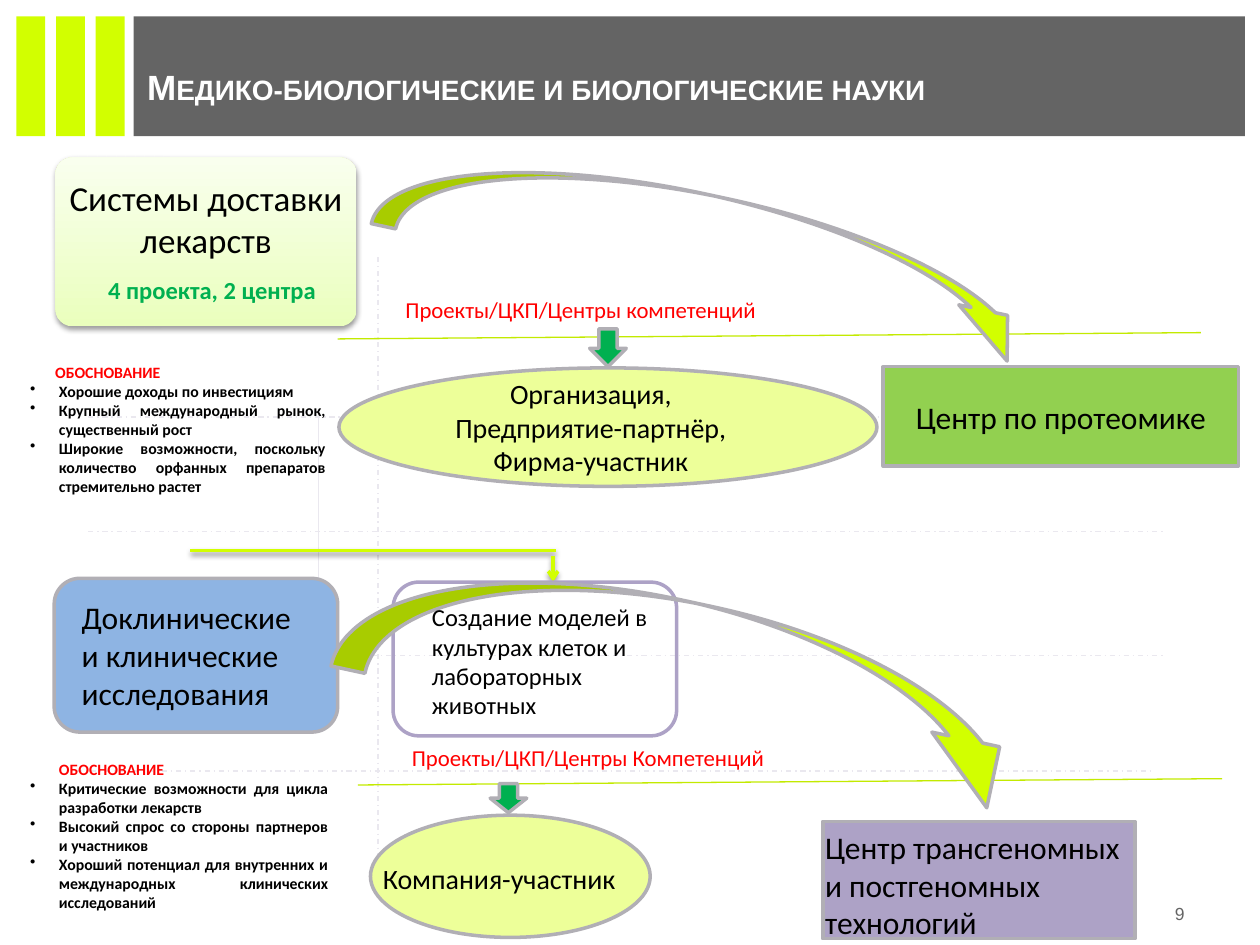
"""Build the slide on medical and biological sciences."""
from lxml import etree
from pptx import Presentation
from pptx.dml import color as dml
from pptx.enum import dml as dash, shapes, text
from pptx.oxml import ns
from pptx.util import Inches, Pt

HUES = {
    "lime": "D2FF00", "grey": "646464", "white": "FFFFFF", "black": "000000",
    "red": "FF0000", "green": "00B050", "grass": "92D050", "edge": "B1AFB5",
    "pale": "EDFF99", "blue": "8EB4E3", "mauve": "ADA2C6", "grid": "EAE8EF",
    "rule": "C3EA00", "low": "EAFFBD", "high": "F9FFEE",
}
RGB = {name: dml.RGBColor.from_string(code) for name, code in HUES.items()}
KIND = shapes.MSO_SHAPE
LEFT, MID, RIGHT, FULL = (text.PP_ALIGN.LEFT, text.PP_ALIGN.CENTER,
                          text.PP_ALIGN.RIGHT, text.PP_ALIGN.JUSTIFY)

deck = Presentation()
deck.slide_width, deck.slide_height = Inches(10), Inches(7.5)
slide = deck.slides.add_slide(deck.slide_layouts[6])


def cast(effect):
    """Put a soft shadow below into an effect list."""
    shade = etree.SubElement(effect, ns.qn("a:outerShdw"), blurRad=str(Pt(3.1)),
                             dist=str(Pt(1.6)), dir="5400000", rotWithShape="0")
    ink = etree.SubElement(shade, ns.qn("a:srgbClr"), val=HUES["black"])
    etree.SubElement(ink, ns.qn("a:alpha"), val="38000")


def say(place, lines, size, hue="black", align=LEFT, bold=False, font="Calibri", mid=False):
    """Add a text box with one paragraph per line."""
    box = slide.shapes.add_textbox(*map(Inches, place))
    frame = box.text_frame
    frame.word_wrap = True
    if mid:
        frame.vertical_anchor = text.MSO_ANCHOR.MIDDLE
    for i, line in enumerate(lines):
        para = frame.paragraphs[0] if i == 0 else frame.add_paragraph()
        para.text = line
        para.alignment = align
        para.font.size, para.font.name, para.font.bold = Pt(size), font, bold
        para.font.color.rgb = RGB[hue]
    return frame


for left, width, hue in [(1.06, 8.82, "grey"), *((0.13 + 0.315 * i, 0.23, "lime") for i in range(3))]:
    bar = slide.shapes.add_shape(KIND.RECTANGLE, *map(Inches, (left, 0.13, width, 0.95)))
    bar.shadow.inherit = False
    bar.fill.solid()
    bar.fill.fore_color.rgb = RGB[hue]
    bar.line.fill.background()

title = say((1.07, 0.3, 8.81, 0.77), ["Медико-биологические и биологические науки"], 20,
            "white", bold=True, font="Arial", mid=True)
title.paragraphs[0].runs[0].font._element.set("cap", "small")
say((7.17, 7.15, 2.33, 0.2), ["9"], 10, "grey", RIGHT, font="Arial", mid=True)

wires = [
    (3, 2.04, 3, 6.96, "grid", "dash"),
    (0.61, 6.12, 9.14, 6.12, "grid", "dash"),
    *((0.7, y, 9.23, y, "grid", "dash") for y in (3.31, 4.22, 5.2)),
    (2.53, 3.31, 2.53, 5.74, "grid", ""),
    (2.68, 2.69, 9.53, 2.64, "rule", ""),
    (2.84, 6.23, 9.7, 6.18, "rule", ""),
    (1.51, 4.37, 4.41, 4.37, "lime", "bold"),
    (4.39, 4.41, 4.39, 4.62, "lime", "arrow"),
]
boxes = [
    (KIND.ROUNDED_RECTANGLE, 0.44, 1.25, 2.39, 1.34, "fade", None),
    (KIND.RECTANGLE, 7.01, 2.91, 2.82, 0.79, "grass", "edge"),
    (KIND.CURVED_UP_ARROW, 2.97, 1.56, 5.36, 0.79, "lime", "edge"),
    (KIND.OVAL, 2.69, 2.92, 4.27, 0.94, "pale", "edge"),
    (KIND.ROUNDED_RECTANGLE, 0.43, 4.59, 2.25, 1.22, "blue", "edge"),
    (KIND.ROUNDED_RECTANGLE, 3.12, 4.62, 2.25, 1.22, None, "mauve"),
    (KIND.OVAL, 2.94, 6.47, 2.22, 0.97, "pale", "edge"),
    (KIND.DOWN_ARROW, 4.68, 2.61, 0.29, 0.3, "green", "edge"),
    (KIND.DOWN_ARROW, 3.89, 6.22, 0.29, 0.23, "green", "edge"),
    (KIND.CURVED_UP_ARROW, 2.68, 4.79, 5.6, 1.1, "lime", "edge"),
    (KIND.RECTANGLE, 6.53, 6.52, 2.48, 0.93, "mauve", "edge"),
]

for *ends, hue, style in wires:
    wire = slide.shapes.add_connector(shapes.MSO_CONNECTOR.STRAIGHT, *map(Inches, ends))
    wire.line.color.rgb = RGB[hue]
    wire.line.width = Pt(2 if style in ("bold", "arrow") else 0.75)
    if style == "dash":
        wire.line.dash_style = dash.MSO_LINE.DASH_DOT
    if style == "arrow":
        etree.SubElement(wire.line._get_or_add_ln(), ns.qn("a:tailEnd"), type="arrow")
    effect = etree.SubElement(wire._element.spPr, ns.qn("a:effectLst"))
    if style in ("bold", "arrow"):
        cast(effect)

for kind, *place, hue, edge in boxes:
    box = slide.shapes.add_shape(kind, *map(Inches, place))
    box.shadow.inherit = False
    if hue == "fade":
        box.adjustments[0] = 0.1
        box.fill.gradient()
        box.fill.gradient_angle = 90
        for stop, tint in zip(box.fill.gradient_stops, ("low", "high")):
            stop.color.rgb = RGB[tint]
        cast(box._element.spPr.find(ns.qn("a:effectLst")))
    elif hue:
        box.fill.solid()
        box.fill.fore_color.rgb = RGB[hue]
    else:
        box.fill.background()
    if edge:
        box.line.color.rgb = RGB[edge]
        box.line.width = Pt(2)
    else:
        box.line.fill.background()
    if kind == KIND.CURVED_UP_ARROW:
        box.rotation = 12.2
        box.adjustments[2] = 0.45
        box._element.spPr.xfrm.set("flipV", "1")
    if hue == "grass":
        para = box.text_frame.paragraphs[0]
        para.text = "Центр по протеомике"
        para.alignment = MID
        para.font.size, para.font.name = Pt(18), "Calibri"
        para.font.color.rgb = RGB["black"]

head = say((0.48, 1.29, 2.31, 0.88), ["Системы доставки лекарств"], 20, align=MID, mid=True)
head.margin_left = head.margin_right = Inches(0.04)
say((0.76, 2.13, 1.92, 0.34), ["4 проекта, 2 центра"], 14, "green", bold=True)
say((3.12, 2.3, 3.53, 0.62), ["Проекты/ЦКП/Центры компетенций"], 13, "red")
say((3.17, 5.85, 3.42, 0.62), ["Проекты/ЦКП/Центры Компетенций"], 13, "red")
say((3.46, 2.94, 2.46, 0.91), ["Организация,", "Предприятие-партнёр,", "Фирма-участник"], 16, align=MID)
say((0.55, 4.7, 2.01, 1.01), ["Доклинические и клинические исследования"], 18)
say((3.33, 4.73, 1.91, 1.04), ["Создание моделей в культурах клеток и лабораторных животных"], 14)
say((2.94, 6.79, 2.53, 0.37), ["Компания-участник"], 16)
say((6.45, 6.52, 2.65, 1.01), ["Центр трансгеномных и постгеномных технологий"], 18)

cases = [
    (2.83, 2.54, 1.16, 0.2, ["Хорошие доходы по инвестициям",
                             "Крупный международный рынок, существенный рост",
                             "Широкие возможности, поскольку количество орфанных препаратов "
                             "стремительно растет"]),
    (5.98, 2.56, 1.32, 0.23, ["Критические возможности для цикла разработки лекарств",
                              "Высокий спрос со стороны партнеров и участников",
                              "Хороший потенциал для внутренних и международных "
                              "клинических исследований"]),
]
for top, width, high, inset, points in cases:
    frame = say((0.14, top, width, high), ["ОБОСНОВАНИЕ", *points], 9, align=FULL, bold=True)
    first, *rest = frame.paragraphs
    first.font.color.rgb = RGB["red"]
    first._p.get_or_add_pPr().set("marL", str(Inches(inset)))
    for para in rest:
        props = para._p.get_or_add_pPr()
        props.set("marL", str(Inches(0.23)))
        props.set("indent", str(-Inches(0.23)))
        mark = etree.Element(ns.qn("a:buChar"), char="•")
        props.insert(0, mark)

deck.save("out.pptx")
